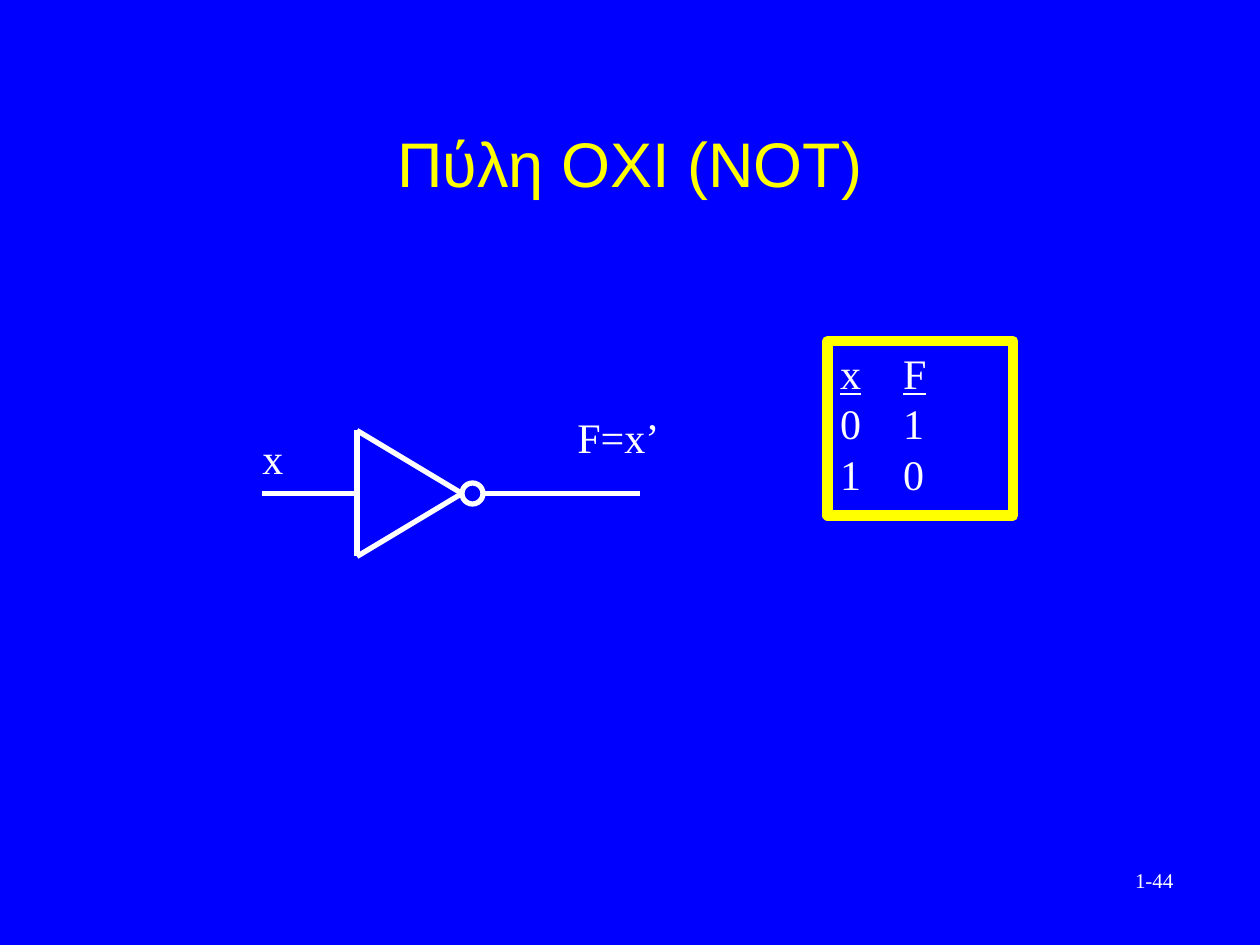
from dataclasses import dataclass

from pptx import Presentation
from pptx.dml.color import RGBColor
from pptx.enum.shapes import MSO_CONNECTOR, MSO_SHAPE
from pptx.enum.text import MSO_ANCHOR, MSO_AUTO_SIZE, PP_ALIGN
from pptx.oxml.ns import qn
from pptx.util import Pt

STRAIGHT = MSO_CONNECTOR.STRAIGHT
RECTANGLE, OVAL = MSO_SHAPE.RECTANGLE, MSO_SHAPE.OVAL
TOP, MIDDLE = MSO_ANCHOR.TOP, MSO_ANCHOR.MIDDLE
LEFT, CENTER = PP_ALIGN.LEFT, PP_ALIGN.CENTER
NO_AUTOFIT = MSO_AUTO_SIZE.NONE
TITLE_ONLY = 5


@dataclass(frozen=True)
class Theme:
    background: RGBColor = RGBColor(0, 0, 255)
    ink: RGBColor = RGBColor(255, 255, 255)
    accent: RGBColor = RGBColor(255, 255, 0)
    heading_font: str = "Arial"
    body_font: str = "Times New Roman"
    heading_size: int = 36
    body_size: int = 24
    small_size: int = 12
    leading: float = 1.2
    wire: int = 3
    frame: int = 6


THEME = Theme()


def apply(target, values):
    for name, value in values.items():
        setattr(target, name, value)


def write(shape, lines, size=THEME.body_size, font=THEME.body_font,
          color=THEME.ink, align=LEFT, anchor=TOP, wrap=False):
    """Fill a shape with one paragraph per line of text."""
    frame = shape.text_frame
    frame.text = "\n".join(lines)
    apply(frame, {"word_wrap": wrap, "auto_size": NO_AUTOFIT,
                  "vertical_anchor": anchor})
    for para in frame.paragraphs:
        apply(para, {"alignment": align,
                     "line_spacing": Pt(round(size * THEME.leading, 1))})
        for span in para.runs:
            apply(span.font, {"name": font, "size": Pt(size), "bold": False})
            span.font.color.rgb = color


def place(shape, left, top, width, height):
    apply(shape, {"left": Pt(left), "top": Pt(top),
                  "width": Pt(width), "height": Pt(height)})


def add_title(page, text):
    title = page.shapes.title
    place(title, 54, 48, 612, 90)
    write(title, [text], THEME.heading_size, THEME.heading_font,
          THEME.accent, CENTER, MIDDLE, wrap=True)


def add_label(page, text, left, top, width, height=36, size=THEME.body_size):
    box = page.shapes.add_textbox(Pt(left), Pt(top), Pt(width), Pt(height))
    write(box, [text], size)


def add_wire(page, start, end):
    wire = page.shapes.add_connector(STRAIGHT, *map(Pt, start + end))
    wire.line.color.rgb = THEME.ink
    wire.line.width = Pt(THEME.wire)
    properties = wire._element.spPr
    properties.append(properties.makeelement(qn("a:effectLst"), {}))


def add_outline(page, kind, bounds, color, weight):
    shape = page.shapes.add_shape(kind, *map(Pt, bounds))
    shape.shadow.inherit = False
    shape.fill.background()
    shape.line.color.rgb = color
    shape.line.width = Pt(weight)
    return shape


def add_truth_table(page):
    """Frame the tabbed truth table and underline its heading row."""
    box = add_outline(page, RECTANGLE, (473, 195, 106, 99.5),
                      THEME.accent, THEME.frame)
    write(box, ["x\tF", "0\t1", "1\t0"], wrap=True)
    for span in box.text_frame.paragraphs[0].runs:
        span.font.underline = True


def add_not_gate(page):
    axis, back, tip, half, bubble = 282, 204, 264, 36, 12
    upper, lower, nose = (back, axis - half), (back, axis + half), (tip, axis)
    add_wire(page, (150, axis), (back, axis))
    add_wire(page, (tip + bubble, axis), (366, axis))
    for start, end in ((upper, lower), (lower, nose), (upper, nose)):
        add_wire(page, start, end)
    add_outline(page, OVAL, (tip, axis - bubble / 2, bubble, bubble),
                THEME.ink, THEME.wire)


def main():
    deck = Presentation()
    apply(deck, {"slide_width": Pt(720), "slide_height": Pt(540)})
    page = deck.slides.add_slide(deck.slide_layouts[TITLE_ONLY])
    page.background.fill.solid()
    page.background.fill.fore_color.rgb = THEME.background
    add_title(page, "Πύλη ΟΧΙ (ΝΟΤ)")
    add_not_gate(page)
    add_label(page, "x", 142.8, 243.4, 26.5)
    add_label(page, "F=x’", 322.8, 231.4, 61)
    add_truth_table(page)
    add_label(page, "1-44", 641.5, 492, 38, 21.6, THEME.small_size)
    deck.save("out.pptx")


if __name__ == "__main__":
    main()
